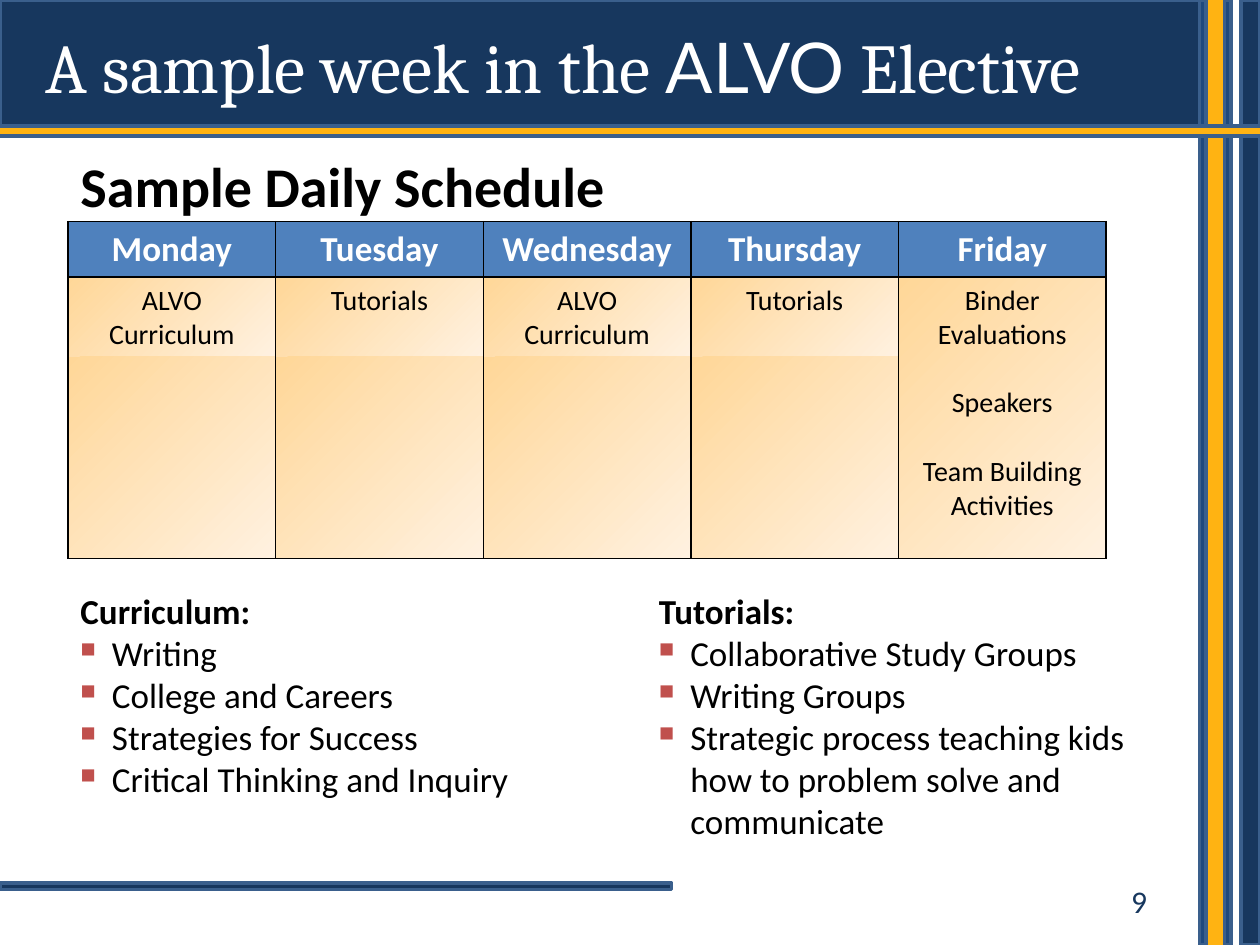
import pptx
import pptx.dml.color
import pptx.enum.dml
import pptx.enum.shapes
import pptx.enum.text
import pptx.oxml
import pptx.oxml.ns
import pptx.util
from lxml import etree

Inches, Pt = pptx.util.Inches, pptx.util.Pt
RGBColor = pptx.dml.color.RGBColor
PP_ALIGN = pptx.enum.text.PP_ALIGN
qn = pptx.oxml.ns.qn

NAVY = RGBColor(0x17, 0x37, 0x5E)
BLUE = RGBColor(0x1F, 0x49, 0x7D)
OUTLINE = RGBColor(0x3A, 0x5F, 0x8C)
GOLD = RGBColor(0xFF, 0xB3, 0x12)
HEADER = RGBColor(0x4F, 0x81, 0xBD)
PEACH = RGBColor(0xFF, 0xD7, 0x98)
CREAM = RGBColor(0xFF, 0xF1, 0xE0)
RED = RGBColor(0xC0, 0x50, 0x4D)
BLACK = RGBColor(0, 0, 0)
WHITE = RGBColor(0xFF, 0xFF, 0xFF)

BANDS = [  # left, top, width, height, fill, outlined
    (9.85, 0, 0.15, 7.5, NAVY, True),
    (9.55, 0, 0.2, 7.5, GOLD, False),
    (9.52, 0, 0.05, 7.5, BLUE, True),
    (0, 0, 9.52, 1, NAVY, True),
    (0, 7.01, 5.33, 0.05, NAVY, True),
    (9.72, 0, 0.05, 7.5, BLUE, True),
    (-0.02, 1, 10.04, 0.08, GOLD, True),
]
DAYS = ["Monday", "Tuesday", "Wednesday", "Thursday", "Friday"]
ACTIVITIES = [
    ["ALVO Curriculum"],
    ["Tutorials"],
    ["ALVO Curriculum"],
    ["Tutorials"],
    ["Binder Evaluations", "Speakers", "Team Building Activities"],
]
ROW_HEIGHTS = [0.44, 0.63, 1.6]


def add_run(p, text, size, color, bold=False, font="Calibri"):
    r = p.add_run()
    r.text = text
    r.font.name, r.font.size, r.font.bold = font, Pt(size), bold
    r.font.color.rgb = color


def add_textbox(s, left, top, width, height):
    tf = s.shapes.add_textbox(Inches(left), Inches(top), Inches(width), Inches(height)).text_frame
    tf.word_wrap = True
    return tf


def set_indent(p, indent):
    pPr = p._p.get_or_add_pPr()
    pPr.set("marL", str(Inches(indent)))
    pPr.set("indent", str(-Inches(indent)))
    return pPr


def add_bands(s):
    for left, top, width, height, fill, outlined in BANDS:
        sp = s.shapes.add_shape(pptx.enum.shapes.MSO_SHAPE.RECTANGLE,
                                Inches(left), Inches(top), Inches(width), Inches(height))
        sp.shadow.inherit = False
        sp.fill.solid()
        sp.fill.fore_color.rgb = fill
        if outlined:
            sp.line.color.rgb = OUTLINE
            sp.line.width = Pt(2)
        else:
            sp.line.fill.background()


def add_title(s, left, top, width, height):
    title = s.shapes.title
    s.shapes._spTree.append(title._element)  # in front of the header band
    title.left, title.top = Inches(left), Inches(top)
    title.width, title.height = Inches(width), Inches(height)
    tf = title.text_frame
    tf.auto_size = pptx.enum.text.MSO_AUTO_SIZE.NONE
    tf.vertical_anchor = pptx.enum.text.MSO_ANCHOR.TOP
    p = tf.paragraphs[0]
    p.alignment = PP_ALIGN.LEFT
    set_indent(p, 0.38)
    for text, font in [("A sample week in the ", "Cambria"), ("ALVO", "Lato"), (" Elective", "Cambria")]:
        add_run(p, text, 40, WHITE, font=font)


def set_borders(cell, sides):
    """Draw the named sides (of L, R, T, B) in black and hide the others."""
    tcPr = cell._tc.get_or_add_tcPr()
    for i, side in enumerate("LRTB"):
        ln = etree.Element(qn(f"a:ln{side}"), w=str(Pt(1)))
        if side in sides:
            fill = etree.SubElement(ln, qn("a:solidFill"))
            etree.SubElement(fill, qn("a:srgbClr"), val=str(BLACK))
        else:
            etree.SubElement(ln, qn("a:noFill"))
        tcPr.insert(i, ln)


def shade(cell):
    cell.fill.gradient()
    cell.fill.gradient_angle = 315
    for stop, color in zip(cell.fill.gradient_stops, (PEACH, CREAM)):
        stop.color.rgb = color


def fill_cell(cell, lines, size, color, bold=False):
    tf = cell.text_frame
    for i, text in enumerate(lines):
        p = tf.paragraphs[0] if i == 0 else tf.add_paragraph()
        p.alignment = PP_ALIGN.CENTER
        if i:
            p.space_before = Pt(19.5)
        add_run(p, text, size, color, bold)


def add_schedule(s, left, top, width):
    table = s.shapes.add_table(len(ROW_HEIGHTS), len(DAYS), Inches(left), Inches(top),
                               Inches(width), Inches(sum(ROW_HEIGHTS))).table
    for row, height in zip(table.rows, ROW_HEIGHTS):
        row.height = Inches(height)
    last = len(DAYS) - 1
    table.cell(1, last).merge(table.cell(2, last))
    for c, (day, lines) in enumerate(zip(DAYS, ACTIVITIES)):
        head, upper, lower = (table.cell(r, c) for r in range(3))
        head.fill.solid()
        head.fill.fore_color.rgb = HEADER
        fill_cell(head, [day], 20, WHITE, True)
        fill_cell(upper, lines, 16, BLACK)
        shade(upper)
        shade(lower)
        set_borders(head, "LRTB")
        set_borders(upper, "LRTB" if c == last else "LRT")
        set_borders(lower, "LRB")


def add_bullet(p):
    pPr = set_indent(p, 0.25)
    color = etree.SubElement(pPr, qn("a:buClr"))
    etree.SubElement(color, qn("a:srgbClr"), val=str(RED))
    etree.SubElement(pPr, qn("a:buSzPct"), val="60000")
    etree.SubElement(pPr, qn("a:buChar"), char="■")


def add_list(s, left, top, width, height, heading, items):
    tf = add_textbox(s, left, top, width, height)
    add_run(tf.paragraphs[0], heading, 20, BLACK, True)
    for item in items:
        p = tf.add_paragraph()
        add_bullet(p)
        add_run(p, item, 20, BLACK)


def add_page_number(s, left, top, width, height, number):
    p = add_textbox(s, left, top, width, height).paragraphs[0]
    p.alignment = PP_ALIGN.CENTER
    add_run(p, number, 18, NAVY)


def main():
    prs = pptx.Presentation()
    prs.slide_width, prs.slide_height = Inches(10), Inches(7.5)
    s = prs.slides.add_slide(prs.slide_layouts[5])
    add_page_number(s, 8.58, 6.95, 0.92, 0.4, "9")
    add_bands(s)
    add_title(s, 0.26, 0.14, 9.19, 0.63)
    tf = add_textbox(s, 0.54, 1.15, 4.59, 0.64)
    add_run(tf.paragraphs[0], "Sample Daily Schedule", 32, BLACK, True)
    add_list(s, 0.54, 4.63, 3.69, 1.78, "Curriculum:",
             ["Writing", "College and Careers", "Strategies for Success", "Critical Thinking and Inquiry"])
    add_list(s, 5.13, 4.63, 3.92, 2.12, "Tutorials:",
             ["Collaborative Study Groups", "Writing Groups",
              "Strategic process teaching kids how to problem solve and communicate"])
    add_schedule(s, 0.54, 1.76, 8.24)
    prs.save("out.pptx")


if __name__ == "__main__":
    main()
